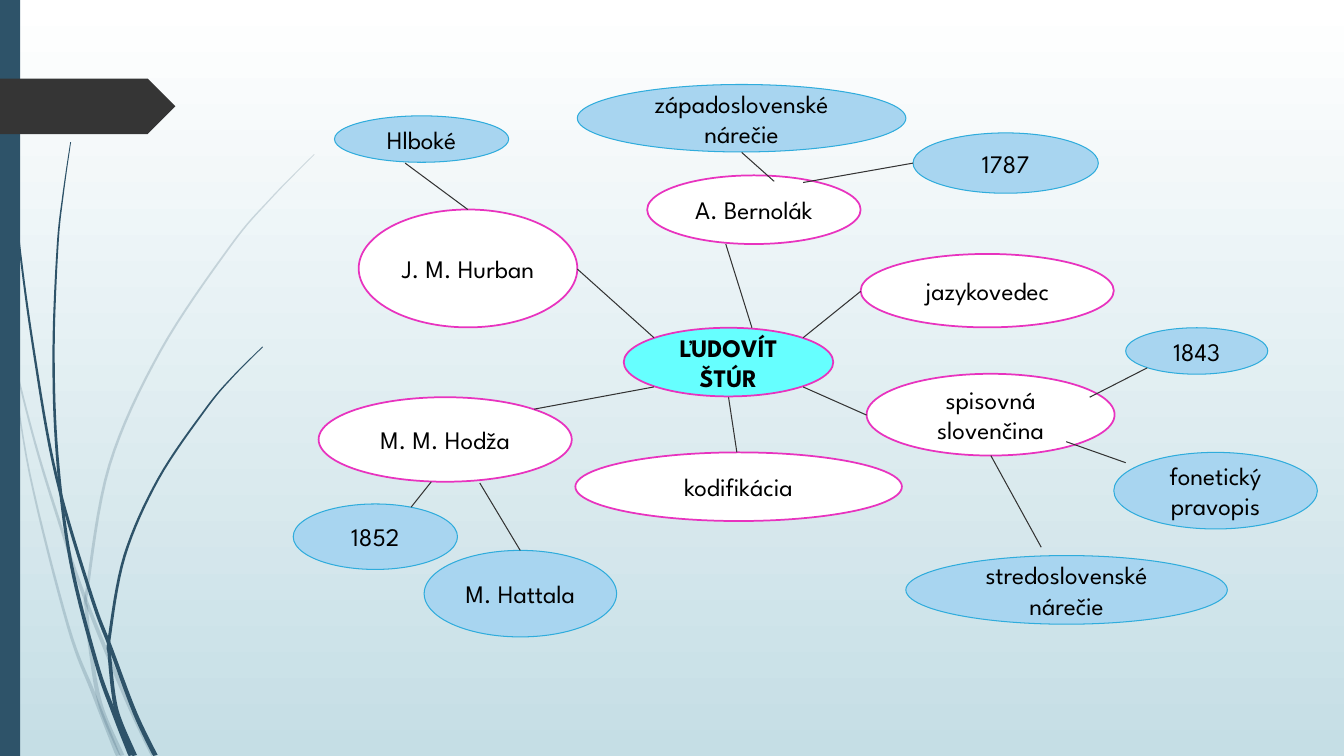
"""Builds a mind map slide about Ľudovít Štúr."""
from math import hypot

from lxml.etree import SubElement
from pptx import Presentation
from pptx.dml.color import RGBColor
from pptx.enum.shapes import MSO_CONNECTOR, MSO_SHAPE
from pptx.enum.text import MSO_ANCHOR, PP_ALIGN
from pptx.oxml.ns import qn
from pptx.util import Cm, Pt

WIDTH, HEIGHT = 33.87, 19.05
FONT = "League Spartan"
NAVY, CHARCOAL, RULE = "2E5369", "353535", "333333"
TOPIC = ("66FFFF", "E833BF", 1.25)
BRANCH = ("FFFFFF", "E833BF", 1.25)
DETAIL = ("A8D5F0", "2FACDC", 0.75)

PALE_STRANDS = [
    [(0, 7.37), (0.3, 8.84), (0.89, 11.18), (1.52, 13.23), (2.13, 15.04),
     (3.18, 17.6), (3.87, 19.05)],
    [(0.28, 8.89), (0.75, 11.94), (1.71, 15.75), (2.36, 17.48), (2.98, 19.05)],
    [(7.92, 3.89), (6.81, 5.02), (5.8, 6.21), (4.04, 8.85), (2.76, 11.72),
     (2.2, 14.83), (2.18, 15.34), (2.29, 16.41), (2.54, 17.78), (3.08, 19.05)],
]
DARK_STRANDS = [
    [(0.09, 0), (0.19, 2.79), (0.46, 5.92), (0.88, 9.02), (1.42, 12.01),
     (2.3, 15.01), (2.79, 16.33), (3.4, 17.96), (3.92, 19.05)],
    [(1.78, 3.58), (1.59, 4.9), (1.45, 6.22), (1.35, 8.86), (1.44, 11.46),
     (1.78, 14.14), (2.43, 16.71), (2.87, 17.96), (3.3, 19.05)],
    [(6.62, 8.74), (5.87, 9.49), (5.19, 10.3), (3.99, 12.07), (3.14, 14.01),
     (2.76, 16.05), (2.76, 16.51), (2.87, 17.55), (3.02, 18.16), (3.4, 19.05)],
]
BUBBLES = [
    ("ĽUDOVÍT ŠTÚR", TOPIC, (15.72, 8.26, 5.28, 1.73)),
    ("jazykovedec", BRANCH, (21.69, 6.4, 6.38, 1.85)),
    ("spisovná slovenčina", BRANCH, (21.84, 9.42, 6.25, 2.06)),
    ("kodifikácia", BRANCH, (14.5, 11.4, 8.23, 1.73)),
    ("M. M. Hodža", BRANCH, (8.03, 10.01, 6.38, 2.13)),
    ("J. M. Hurban", BRANCH, (9.04, 5.28, 5.51, 2.97)),
    ("A. Bernolák", BRANCH, (16.31, 4.42, 5.38, 1.73)),
    ("1843", DETAIL, (28.37, 8.26, 3.58, 1.17)),
    ("fonetický pravopis", DETAIL, (28.07, 11.4, 5.13, 1.93)),
    ("stredoslovenské nárečie", DETAIL, (22.83, 14, 8.1, 1.73)),
    ("Hlboké", DETAIL, (8.43, 2.92, 4.39, 1.17)),
    ("1787", DETAIL, (23.01, 3.35, 4.67, 1.52)),
    ("M. Hattala", DETAIL, (10.69, 13.87, 4.85, 2.18)),
    ("1852", DETAIL, (7.39, 12.7, 4.14, 1.65)),
    ("západoslovenské nárečie", DETAIL, (14.55, 2.13, 8.28, 1.7)),
]
LINKS = [
    (14.55, 6.78, 16.48, 8.51), (13.46, 10.31, 16.48, 9.75),
    (20.24, 8.51, 21.69, 7.34), (20.24, 9.75, 21.84, 10.46),
    (18.36, 10.01, 18.57, 11.4), (18.29, 6.15, 18.95, 8.26),
    (27.46, 10.01, 28.91, 9.27), (26.87, 11.13, 28.37, 11.66),
    (24.97, 11.48, 26.24, 13.79), (10.21, 4.11, 11.79, 5.28),
    (12.09, 12.17, 13.11, 13.87), (10.87, 12.14, 10.36, 12.78),
    (20.24, 4.6, 23.01, 4.11), (19.51, 4.57, 18.69, 3.84),
]


def colour(value):
    return RGBColor.from_string(value)


def paint(shape, fill):
    shape.shadow.inherit = False
    shape.fill.solid()
    shape.fill.fore_color.rgb = colour(fill)
    shape.line.fill.background()


def smooth(knots, steps=8):
    padded = [knots[0], *knots, knots[-1]]
    curve = []
    for a, b, c, d in zip(padded, padded[1:], padded[2:], padded[3:]):
        for step in range(steps):
            t = step / steps
            curve.append(tuple(
                q + t * (r - p) / 2 + t * t * (2 * p - 5 * q + 4 * r - s) / 2
                + t ** 3 * (3 * q - p - 3 * r + s) / 2
                for p, q, r, s in zip(a, b, c, d)))
    return curve + [knots[-1]]


def add_strand(page, knots, opacity=100):
    curve = smooth(knots)
    last = len(curve) - 1
    left, right = [], []
    for index, (x, y) in enumerate(curve):
        before, after = curve[max(index - 1, 0)], curve[min(index + 1, last)]
        run, rise = after[0] - before[0], after[1] - before[1]
        half = (0.02 + 0.1 * index / last) / 2 / hypot(run, rise)
        for edge, side in ((left, half), (right, -half)):
            edge.append((Cm(x + side * rise), Cm(min(y - side * run, HEIGHT))))
    outline = left + right[::-1]
    builder = page.shapes.build_freeform(*outline[0])
    builder.add_line_segments(outline[1:], close=True)
    strand = builder.convert_to_shape()
    paint(strand, NAVY)
    if opacity < 100:
        tint = strand.fill._xPr.find(".//" + qn("a:srgbClr"))
        SubElement(tint, qn("a:alpha"), val=str(opacity * 1000))


def add_block(page, kind, area, fill):
    block = page.shapes.add_shape(kind, *map(Cm, area))
    paint(block, fill)
    return block


def add_bubble(page, text, style, area):
    fill, outline, weight = style
    bubble = add_block(page, MSO_SHAPE.OVAL, area, fill)
    bubble.line.color.rgb = colour(outline)
    bubble.line.width = Pt(weight)
    frame = bubble.text_frame
    frame.text = text
    frame.word_wrap = True
    frame.vertical_anchor = MSO_ANCHOR.MIDDLE
    para = frame.paragraphs[0]
    para.alignment = PP_ALIGN.CENTER
    for span in para.runs:
        span.font.name = FONT
        span.font.size = Pt(18)
        span.font.bold = style is TOPIC
        span.font.color.rgb = colour("000000")


def add_link(page, ends):
    link = page.shapes.add_connector(MSO_CONNECTOR.STRAIGHT, *map(Cm, ends))
    link.line.color.rgb = colour(RULE)
    link.line.width = Pt(0.75)
    SubElement(link._element.spPr, qn("a:effectLst"))


def set_background(page):
    fill = page.background.fill
    fill.gradient()
    fill.gradient_angle = 270
    for stop, value in zip(fill.gradient_stops, ("FFFFFF", "C5DEE5")):
        stop.color.rgb = colour(value)


def main():
    deck = Presentation()
    deck.slide_width, deck.slide_height = Cm(WIDTH), Cm(HEIGHT)
    page = deck.slides.add_slide(deck.slide_layouts[6])
    set_background(page)
    for knots in PALE_STRANDS:
        add_strand(page, knots, opacity=20)
    for knots in DARK_STRANDS:
        add_strand(page, knots)
    add_block(page, MSO_SHAPE.RECTANGLE, (0, 0, 0.51, HEIGHT), NAVY)
    add_block(page, MSO_SHAPE.PENTAGON, (0, 1.98, 4.42, 1.4), CHARCOAL)
    for text, style, area in BUBBLES:
        add_bubble(page, text, style, area)
    for ends in LINKS:
        add_link(page, ends)
    deck.save("out.pptx")


if __name__ == "__main__":
    main()
